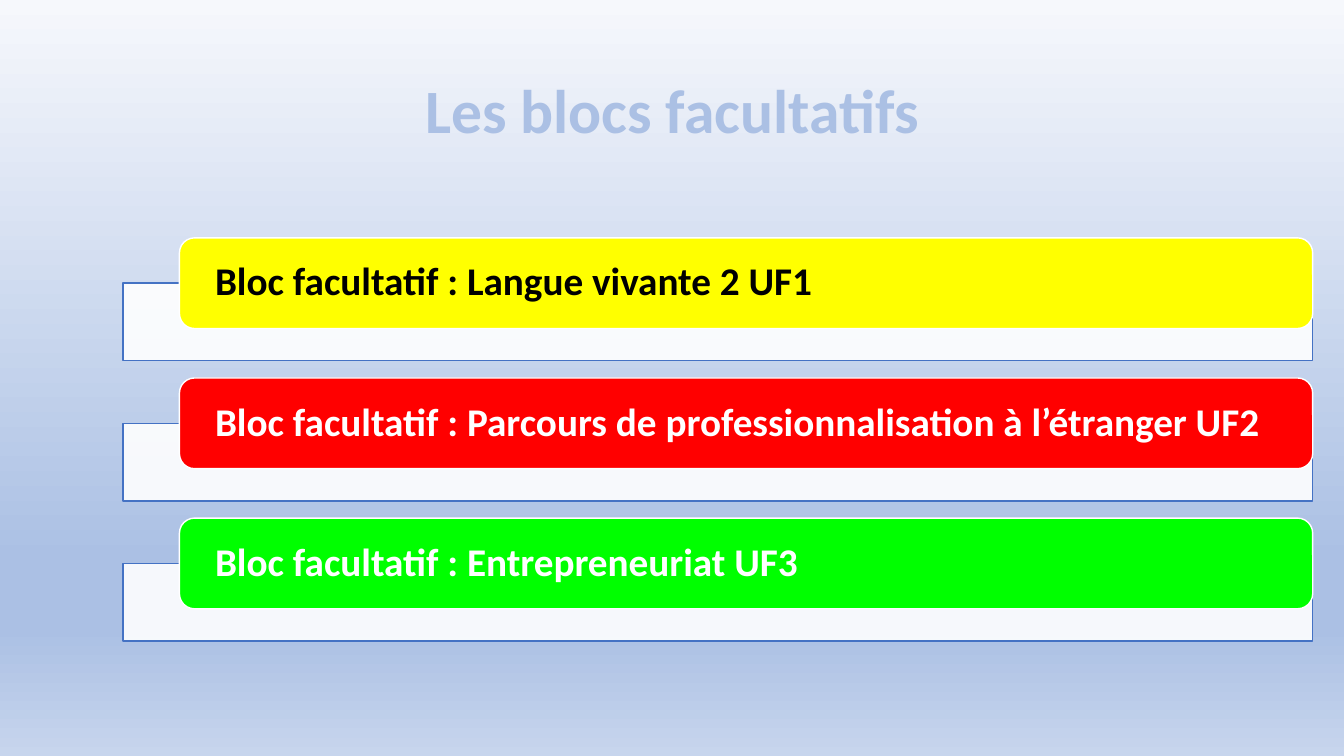
from lxml import etree
from pptx import Presentation
from pptx.dml.color import RGBColor
from pptx.enum.shapes import MSO_SHAPE
from pptx.enum.text import MSO_ANCHOR, PP_ALIGN
from pptx.oxml.ns import qn
from pptx.util import Inches, Pt

BACKGROUND_STOPS = [(0, "F6F8FC"), (74, "ABC0E4"), (83, "ABC0E4"), (100, "C7D5ED")]
BLOCKS = [
    ("Bloc facultatif : Langue vivante 2 UF1", "FFFF00", "000000"),
    ("Bloc facultatif : Parcours de professionnalisation à l’étranger UF2", "FF0000", "FFFFFF"),
    ("Bloc facultatif : Entrepreneuriat UF3", "00FF00", "FFFFFF"),
]
FIRST_TOP, PITCH = 2.36, 1.39


def add_box(preset, left, top, width, height, fill, line):
    box = slide.shapes.add_shape(preset, Inches(left), Inches(top), Inches(width), Inches(height))
    box.shadow.inherit = False
    box.fill.solid()
    box.fill.fore_color.rgb = RGBColor.from_string(fill)
    box.line.color.rgb = RGBColor.from_string(line)
    box.line.width = Pt(1)
    return box


def write_line(frame, wording, size, color, align):
    frame.word_wrap = True
    frame.vertical_anchor = MSO_ANCHOR.MIDDLE
    paragraph = frame.paragraphs[0]
    paragraph.alignment = align
    paragraph.line_spacing = 0.9
    run = paragraph.add_run()
    run.text = wording
    for name, value in {"name": "Calibri", "size": Pt(size), "bold": True}.items():
        setattr(run.font, name, value)
    run.font.color.rgb = RGBColor.from_string(color)


prs = Presentation()
prs.slide_width, prs.slide_height = Inches(13.33), Inches(7.5)
slide = prs.slides.add_slide(prs.slide_layouts[5])

background = slide.background.fill
background.gradient()
background.gradient_angle = 270
stops = slide.element.find(".//" + qn("a:gsLst"))
for old_stop in list(stops):
    stops.remove(old_stop)
for percent, color in BACKGROUND_STOPS:
    stop = etree.SubElement(stops, qn("a:gs"), pos=str(percent * 1000))
    etree.SubElement(stop, qn("a:srgbClr"), val=color)

title = slide.shapes.title
title.left, title.top, title.width, title.height = map(Inches, (0.92, 0.4, 11.5, 1.45))
write_line(title.text_frame, "Les blocs facultatifs", 44, "ABC0E4", PP_ALIGN.CENTER)

for row, (wording, fill, text_color) in enumerate(BLOCKS):
    top = FIRST_TOP + row * PITCH
    band = add_box(MSO_SHAPE.RECTANGLE, 1.22, top + 0.45, 11.8, 0.77, "FFFFFF", "4472C4")
    white = band.fill._xPr.find(qn("a:solidFill"))[0]
    etree.SubElement(white, qn("a:alpha"), val="90000")

    label = add_box(MSO_SHAPE.ROUNDED_RECTANGLE, 1.78, top, 11.24, 0.9, fill, "FFFFFF")
    frame = label.text_frame
    frame.margin_left = frame.margin_right = Inches(0.31)
    frame.margin_top = frame.margin_bottom = 0
    write_line(frame, wording, 28, text_color, PP_ALIGN.LEFT)

prs.save("out.pptx")
